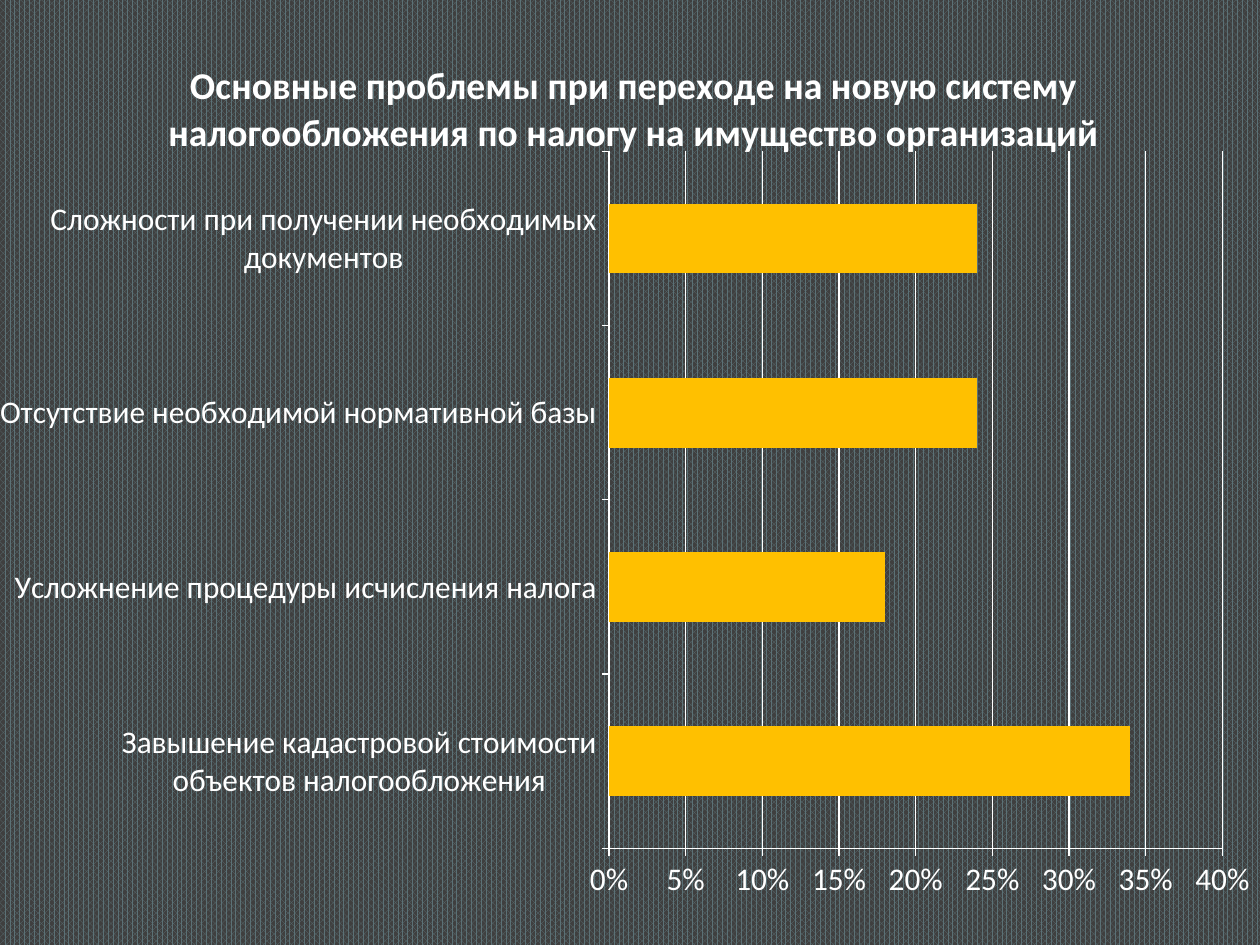
from dataclasses import dataclass

from lxml import etree
from pptx import Presentation
from pptx import util as u
from pptx.chart import data as chart_data
from pptx.dml import color
from pptx.enum import chart as ch, dml
from pptx.oxml import ns


@dataclass(frozen=True)
class Theme:
    font: str = "Calibri"
    ink: color.RGBColor = color.RGBColor(0xFF, 0xFF, 0xFF)
    bar: color.RGBColor = color.RGBColor(0xFF, 0xC0, 0x00)
    weave: color.RGBColor = color.RGBColor(0x5B, 0x71, 0x76)
    ground: color.RGBColor = color.RGBColor(0x3F, 0x3F, 0x3F)
    label_size: float = 18
    title_size: float = 21.6


class SlideBuilder:
    def __init__(self, slide, theme):
        self.slide = slide
        self.theme = theme

    def background(self):
        fill = self.slide.background.fill
        fill.patterned()
        fill.pattern = dml.MSO_PATTERN.PERCENT_75
        fill.fore_color.rgb = self.theme.weave
        fill.back_color.rgb = self.theme.ground

    def style_font(self, font, size, bold=False):
        font.name = self.theme.font
        font.size = u.Pt(size)
        font.bold = bold
        font.color.rgb = self.theme.ink

    def style_line(self, line):
        line.color.rgb = self.theme.ink
        line.width = u.Pt(0.75)

    def axis(self, axis, gridlines):
        axis.has_major_gridlines = gridlines
        axis.major_tick_mark = ch.XL_TICK_MARK.OUTSIDE
        axis.minor_tick_mark = ch.XL_TICK_MARK.NONE
        self.style_line(axis.format.line)
        self.style_font(axis.tick_labels.font, self.theme.label_size)
        if gridlines:
            self.style_line(axis.major_gridlines.format.line)

    def place_plot(self, chart, **fractions):
        plot_area = chart.element.find(".//" + ns.qn("c:plotArea"))
        layout = plot_area.find(ns.qn("c:layout"))
        if layout is None:
            layout = etree.Element(ns.qn("c:layout"))
            plot_area.insert(0, layout)
        manual = etree.SubElement(layout, ns.qn("c:manualLayout"))
        settings = {"layoutTarget": "inner", "xMode": "edge", "yMode": "edge", **fractions}
        for tag, value in settings.items():
            etree.SubElement(manual, ns.qn("c:" + tag)).set("val", str(value))

    def bar_chart(self, title, shares, left, top, width, height):
        data = chart_data.CategoryChartData(number_format="0%")
        data.categories = list(shares)
        data.add_series(title, list(shares.values()))
        chart = self.slide.shapes.add_chart(
            ch.XL_CHART_TYPE.BAR_CLUSTERED, left, top, width, height, data
        ).chart
        self.style_font(chart.font, self.theme.label_size)
        chart.has_legend = False

        chart.has_title = True
        heading = chart.chart_title.text_frame
        heading.text = title
        self.style_font(heading.paragraphs[0].runs[0].font, self.theme.title_size, bold=True)

        self.axis(chart.category_axis, gridlines=False)
        self.axis(chart.value_axis, gridlines=True)
        chart.value_axis.minimum_scale = 0
        chart.value_axis.maximum_scale = 0.4
        chart.value_axis.major_unit = 0.05
        chart.value_axis.tick_labels.number_format = "0%"
        chart.value_axis.tick_labels.number_format_is_linked = False

        bars = chart.plots[0]
        bars.gap_width = 150
        bars.vary_by_categories = False
        fill = bars.series[0].format.fill
        fill.solid()
        fill.fore_color.rgb = self.theme.bar
        return chart


def main():
    deck = Presentation()
    deck.slide_width, deck.slide_height = u.Inches(10), u.Inches(7.5)
    builder = SlideBuilder(deck.slides.add_slide(deck.slide_layouts[6]), Theme())
    builder.background()

    problem_shares = {
        "Завышение кадастровой стоимости объектов налогообложения": 0.34,
        "Усложнение процедуры исчисления налога": 0.18,
        "Отсутствие необходимой нормативной базы": 0.24,
        "Сложности при получении необходимых документов": 0.24,
    }
    problems = builder.bar_chart(
        "Основные проблемы при переходе на новую систему "
        "налогообложения по налогу на имущество организаций",
        problem_shares,
        u.Inches(0), u.Inches(0.21), u.Inches(10), u.Inches(7.09),
    )
    builder.place_plot(problems, x=0.48, y=0.14, w=0.49, h=0.78)
    deck.save("out.pptx")


if __name__ == "__main__":
    main()
